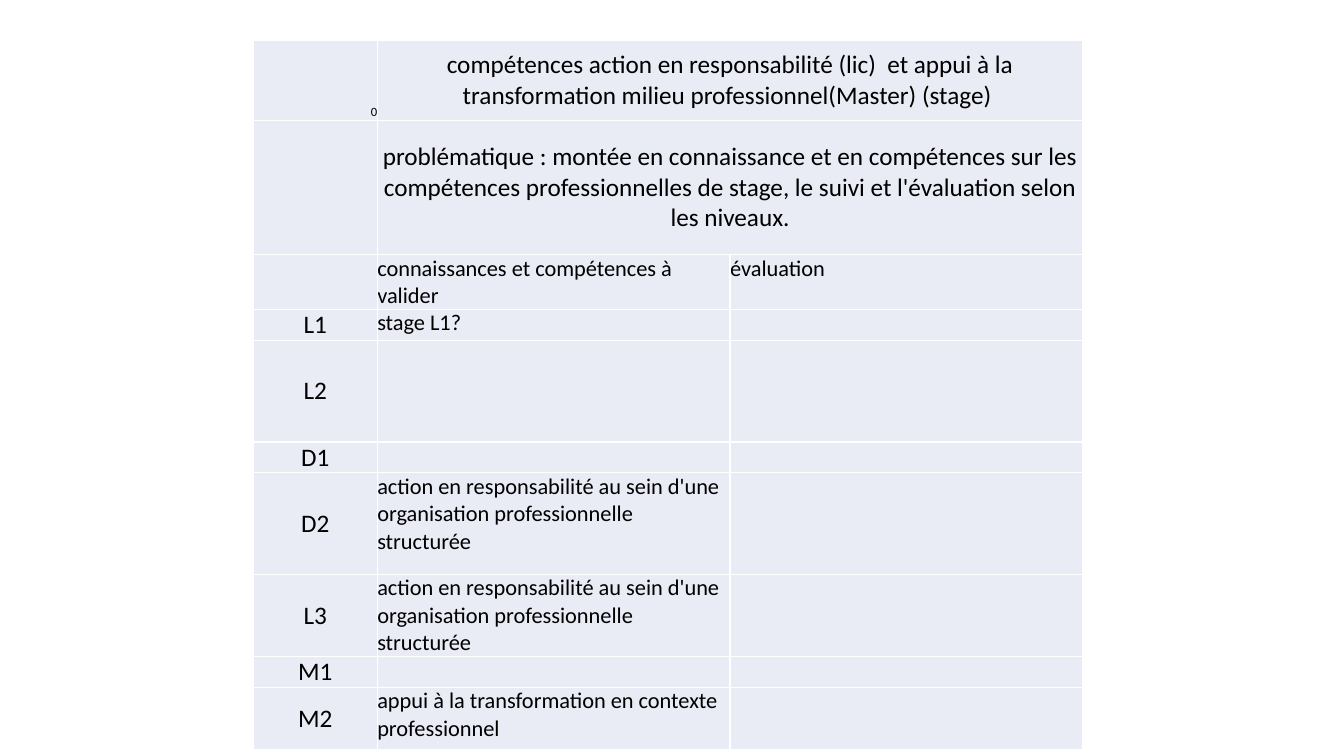
from lxml.etree import SubElement
from pptx import Presentation
from pptx.dml.color import RGBColor
from pptx.enum.text import MSO_ANCHOR, PP_ALIGN
from pptx.oxml.ns import qn
from pptx.util import Pt

HEADINGS = [
    ("0", "compétences action en responsabilité (lic)  et appui à la transformation milieu professionnel(Master) (stage) ", 57),
    ("", "problématique : montée en connaissance et en compétences sur les compétences professionnelles de stage, le suivi et l'évaluation selon les niveaux.", 96),
]
RESPONSIBILITY = "action en responsabilité au sein d'une organisation professionnelle structurée"
LEVELS = [
    ("", "connaissances et compétences à valider", "évaluation", 29.5),
    ("L1", "stage L1?", "", 14.4),
    ("L2", "", "", 72.7),
    ("D1", "", "", 13.7),
    ("D2", RESPONSIBILITY, "", 72.7),
    ("L3", RESPONSIBILITY, "", 44),
    ("M1", "", "", 13.7),
    ("M2", "appui à la transformation en contexte professionnel", "", 44),
]
COLUMN_WIDTHS = [88.5, 252, 252]
LEFT, TOP, HEIGHT = 181, 29, 502.5
CELL_FILL, BORDER, INK = "E9EBF5", "FFFFFF", "000000"


def color(value):
    return RGBColor.from_string(value)


def style_cell(cell):
    cell.margin_left = cell.margin_right = cell.margin_top = cell.margin_bottom = 0
    properties = cell._tc.get_or_add_tcPr()
    for side in ("a:lnL", "a:lnR", "a:lnT", "a:lnB"):
        line = SubElement(properties, qn(side), w=str(Pt(1)))
        SubElement(SubElement(line, qn("a:solidFill")), qn("a:srgbClr"), val=BORDER)
    cell.fill.solid()
    cell.fill.fore_color.rgb = color(CELL_FILL)


def write(cell, wording, size, align, anchor):
    if not wording:
        return
    cell.text_frame.text = wording
    cell.vertical_anchor = anchor
    paragraph = cell.text_frame.paragraphs[0]
    paragraph.alignment = align
    for run in paragraph.runs:
        run.font.size = Pt(size)
        run.font.name = "Calibri"
        run.font.color.rgb = color(INK)


def main():
    presentation = Presentation()
    presentation.slide_width, presentation.slide_height = Pt(960), Pt(540)
    slide = presentation.slides.add_slide(presentation.slide_layouts[6])

    frame = slide.shapes.add_table(
        len(HEADINGS) + len(LEVELS), len(COLUMN_WIDTHS),
        Pt(LEFT), Pt(TOP), Pt(sum(COLUMN_WIDTHS)), Pt(HEIGHT),
    )
    grid = frame.table
    grid.first_row = grid.horz_banding = False
    for column, width in zip(grid.columns, COLUMN_WIDTHS):
        column.width = Pt(width)
    for row, (*_, height) in zip(grid.rows, HEADINGS + LEVELS):
        row.height = Pt(height)
    frame.height = Pt(HEIGHT)
    for cell in grid.iter_cells():
        style_cell(cell)

    for index, (number, heading, _) in enumerate(HEADINGS):
        grid.cell(index, 1).merge(grid.cell(index, 2))
        write(grid.cell(index, 0), number, 9, PP_ALIGN.RIGHT, MSO_ANCHOR.BOTTOM)
        write(grid.cell(index, 1), heading, 18, PP_ALIGN.CENTER, MSO_ANCHOR.MIDDLE)

    for index, (level, skills, evaluation, _) in enumerate(LEVELS, len(HEADINGS)):
        write(grid.cell(index, 0), level, 18, PP_ALIGN.CENTER, MSO_ANCHOR.MIDDLE)
        write(grid.cell(index, 1), skills, 16, PP_ALIGN.LEFT, MSO_ANCHOR.TOP)
        write(grid.cell(index, 2), evaluation, 16, PP_ALIGN.LEFT, MSO_ANCHOR.TOP)

    presentation.save("out.pptx")


if __name__ == "__main__":
    main()
